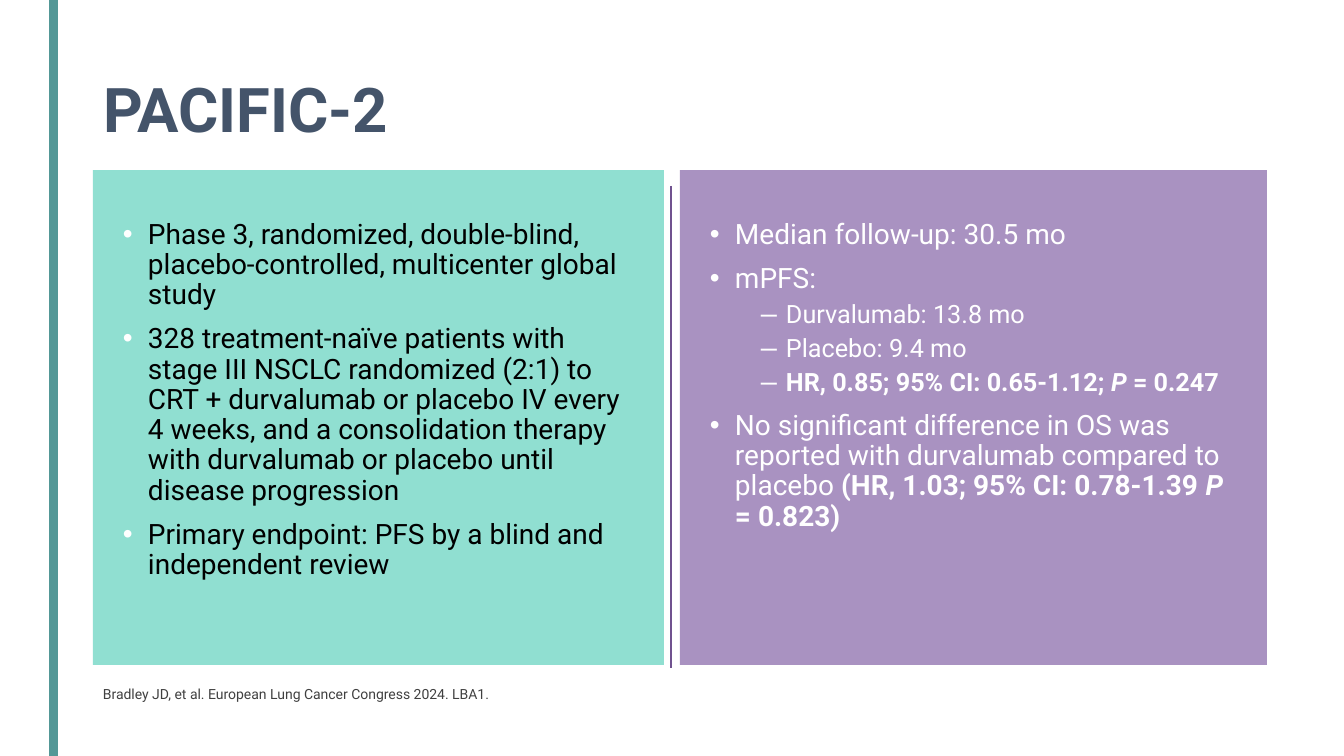
from lxml.etree import SubElement
from pptx import Presentation
from pptx.dml.color import RGBColor
from pptx.enum.shapes import MSO_CONNECTOR, MSO_SHAPE
from pptx.enum.text import MSO_ANCHOR, MSO_AUTO_SIZE, PP_ALIGN
from pptx.oxml.ns import qn
from pptx.util import Pt

SCALE = 12192000 / 1344
FONT = "Roboto"
COLORS = {
    "bar": "549897",
    "divider": "70528F",
    "title": "44546A",
    "design": "90DFD1",
    "results": "A992C1",
    "black": "000000",
    "white": "FFFFFF",
    "citation": "404040",
}
LEVELS = [
    {"char": "•", "indent": 25, "before": 10, "size": 20, "bullet": 100},
    {"char": "–", "indent": 76, "before": 5, "size": 18, "bullet": 115},
]
DESIGN = [
    (0, [("Phase 3, randomized, double-blind, placebo-controlled, multicenter global study", "")]),
    (0, [("328 treatment-naïve patients with stage III NSCLC randomized (2:1) to CRT + "
          "durvalumab or placebo IV every 4 weeks, and a consolidation therapy with "
          "durvalumab or placebo until disease progression", "")]),
    (0, [("Primary endpoint: PFS by a blind and independent review", "")]),
]
RESULTS = [
    (0, [("Median follow-up: 30.5 mo", "")]),
    (0, [("mPFS:", "")]),
    (1, [("Durvalumab: 13.8 mo", "")]),
    (1, [("Placebo: 9.4 mo", "")]),
    (1, [("HR, 0.85; 95% CI: 0.65-1.12; ", "b"), ("P ", "bi"), ("= 0.247", "b")]),
    (0, [("No significant difference in OS was reported with durvalumab compared to placebo ", ""),
         ("(HR, 1.03; 95% CI: 0.78-1.39 ", "b"), ("P ", "bi"), ("= 0.823)", "b")]),
]


def px(n):
    return round(n * SCALE)


def rgb(name):
    return RGBColor.from_string(COLORS[name])


def set_attrs(obj, values):
    for name, value in values.items():
        setattr(obj, name, value)


def place(sp, box):
    set_attrs(sp, dict(zip(("left", "top", "width", "height"), map(px, box))))


def add_run(p, text, size, color, style=""):
    r = p.add_run()
    r.text = text
    set_attrs(r.font, {"name": FONT, "size": Pt(size), "bold": "b" in style, "italic": "i" in style})
    r.font.color.rgb = rgb(color)


def add_bullet(p, level):
    pPr = p._p.get_or_add_pPr()
    pPr.set("marL", str(px(level["indent"])))
    pPr.set("indent", str(-px(25)))
    color = SubElement(pPr, qn("a:buClr"))
    SubElement(color, qn("a:srgbClr"), val=COLORS["white"])
    SubElement(pPr, qn("a:buSzPct"), val=str(level["bullet"] * 1000))
    SubElement(pPr, qn("a:buFont"), typeface="Arial")
    SubElement(pPr, qn("a:buChar"), char=level["char"])


def add_title(s, box, text):
    sp = s.shapes.title
    place(sp, box)
    tf = sp.text_frame
    set_attrs(tf, {"word_wrap": True, "auto_size": MSO_AUTO_SIZE.NONE, "vertical_anchor": MSO_ANCHOR.MIDDLE})
    p = tf.paragraphs[0]
    set_attrs(p, {"alignment": PP_ALIGN.LEFT, "line_spacing": 0.9})
    add_run(p, text, 44, "title", "b")


def add_panel(sp, box, fill, color, items):
    place(sp, box)
    sp.fill.solid()
    sp.fill.fore_color.rgb = rgb(fill)
    tf = sp.text_frame
    set_attrs(tf, {
        "word_wrap": True, "auto_size": MSO_AUTO_SIZE.NONE, "vertical_anchor": MSO_ANCHOR.TOP,
        "margin_left": px(30), "margin_top": px(50), "margin_right": px(30), "margin_bottom": px(20),
    })
    for i, (depth, runs) in enumerate(items):
        p = tf.add_paragraph() if i else tf.paragraphs[0]
        level = LEVELS[depth]
        add_bullet(p, level)
        set_attrs(p, {
            "level": depth, "alignment": PP_ALIGN.LEFT, "line_spacing": 0.9,
            "space_before": Pt(level["before"] if i else 0),
        })
        for text, style in runs:
            add_run(p, text, level["size"], color, style)


def add_frame(s, bar_box, divider):
    line = s.shapes.add_connector(MSO_CONNECTOR.STRAIGHT, *map(px, divider))
    line.line.color.rgb = rgb("divider")
    line.line.width = Pt(1.75)
    SubElement(line._element.spPr, qn("a:effectLst"))
    bar = s.shapes.add_shape(MSO_SHAPE.RECTANGLE, *map(px, bar_box))
    bar.shadow.inherit = False
    bar.fill.solid()
    bar.fill.fore_color.rgb = rgb("bar")
    bar.line.fill.background()


def add_citation(s, box, text):
    tf = s.shapes.add_textbox(*map(px, box)).text_frame
    tf.word_wrap = True
    add_run(tf.paragraphs[0], text, 10, "citation")


def main():
    prs = Presentation()
    set_attrs(prs, {"slide_width": px(1344), "slide_height": px(756)})
    s = prs.slides.add_slide(prs.slide_layouts[3])
    add_frame(s, (49, 0, 9, 756), (671, 186, 671, 668))
    add_title(s, (93, 40, 1159, 146), "PACIFIC-2")
    add_panel(s.placeholders[1], (93, 170, 571, 495), "design", "black", DESIGN)
    add_panel(s.placeholders[2], (680, 170, 587, 495), "results", "white", RESULTS)
    add_citation(s, (93, 681, 1015, 60), "Bradley JD, et al. European Lung Cancer Congress 2024. LBA1.")
    prs.save("out.pptx")


if __name__ == "__main__":
    main()
